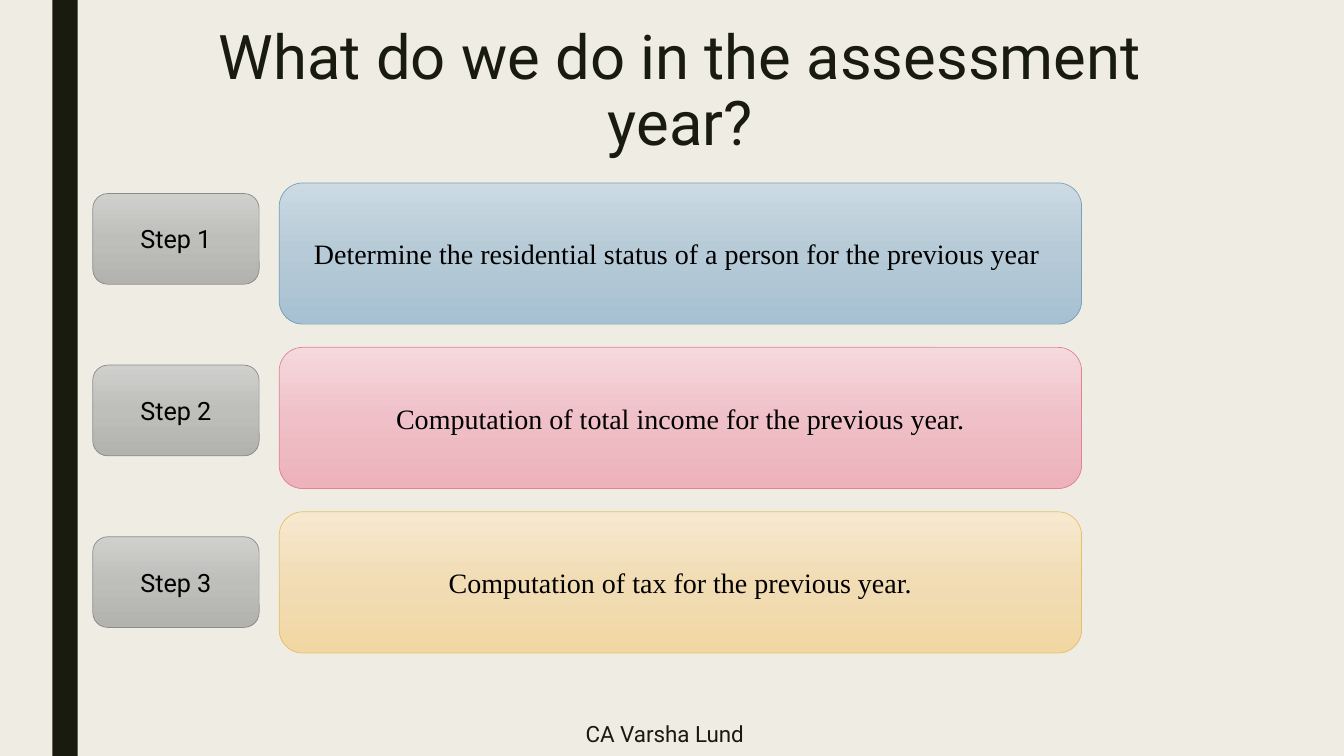
from dataclasses import dataclass

from lxml.etree import SubElement
from pptx import Presentation
from pptx.dml.color import RGBColor
from pptx.dml.fill import FillFormat
from pptx.enum.shapes import MSO_SHAPE
from pptx.enum.text import MSO_ANCHOR, PP_ALIGN
from pptx.oxml.ns import qn
from pptx.shapes.autoshape import Shape
from pptx.slide import Slide
from pptx.util import Inches, Pt

SLIDE_WIDTH = Inches(13.333)
SLIDE_HEIGHT = Inches(7.5)
BACKGROUND = "EFEDE3"
DARK = "191B0E"
BLACK = "000000"


@dataclass(frozen=True)
class Area:
    left: float
    top: float
    width: float
    height: float

    def shifted(self, distance: float) -> "Area":
        return Area(self.left, self.top + distance, self.width, self.height)

    def lengths(self) -> tuple[int, int, int, int]:
        return (
            round(self.left / 100 * SLIDE_WIDTH),
            round(self.top / 100 * SLIDE_HEIGHT),
            round(self.width / 100 * SLIDE_WIDTH),
            round(self.height / 100 * SLIDE_HEIGHT),
        )


@dataclass(frozen=True)
class Palette:
    gradient: tuple[str, str, str]
    outline: str


@dataclass(frozen=True)
class Step:
    task: str
    palette: Palette


SIDE_BAR = Area(3.9, 0, 1.88, 100)
TITLE = Area(11.25, 2.93, 78.75, 21.6)
FOOTER = Area(23.7, 94.13, 51.53, 5.87)
FIRST_LABEL = Area(6.9, 25.6, 12.38, 12)
FIRST_TASK = Area(20.78, 24.2, 59.7, 18.67)
LABEL_PITCH = 22.7
TASK_PITCH = 21.75

GREY = Palette(("CFCFCD", "BEBEBB", "B2B3AF"), "8C8D86")
BLUE = Palette(("CCDAE3", "B6CAD7", "A7C1D2"), "77A2BB")
PINK = Palette(("F6D9DD", "EFC0C7", "EEB2BB"), "E28394")
GOLD = Palette(("F7E9D0", "F1DCB4", "F1D7A3"), "E6C069")

STEPS = (
    Step("Determine the residential status of a person for the previous year ", BLUE),
    Step("Computation of total income for the previous year.", PINK),
    Step("Computation of tax for the previous year.", GOLD),
)


def color(value: str) -> RGBColor:
    return RGBColor.from_string(value)


def fill_solid(fill: FillFormat, value: str) -> None:
    fill.solid()
    fill.fore_color.rgb = color(value)


def fill_gradient(shape: Shape, colors: tuple[str, ...]) -> None:
    shape.fill.gradient()
    shape.fill.gradient_angle = 270
    stops = shape._element.spPr.find(qn("a:gradFill")).find(qn("a:gsLst"))
    for stop in list(stops):
        stops.remove(stop)
    for index, value in enumerate(colors):
        position = index * 100000 // (len(colors) - 1)
        stop = SubElement(stops, qn("a:gs"), pos=str(position))
        SubElement(stop, qn("a:srgbClr"), val=value)


def write(
    shape: Shape,
    text: str,
    *,
    size: float,
    font: str = "Roboto",
    text_color: str = BLACK,
    anchor: MSO_ANCHOR = MSO_ANCHOR.MIDDLE,
    line_spacing: float = 1.0,
) -> None:
    frame = shape.text_frame
    frame.word_wrap = True
    frame.vertical_anchor = anchor
    paragraph = frame.paragraphs[0]
    paragraph.alignment = PP_ALIGN.CENTER
    paragraph.line_spacing = line_spacing
    run = paragraph.add_run()
    run.text = text
    run.font.name = font
    run.font.size = Pt(size)
    run.font.color.rgb = color(text_color)


def add_card(slide: Slide, area: Area, palette: Palette) -> Shape:
    shape = slide.shapes.add_shape(MSO_SHAPE.ROUNDED_RECTANGLE, *area.lengths())
    shape.shadow.inherit = False
    fill_gradient(shape, palette.gradient)
    shape.line.color.rgb = color(palette.outline)
    shape.line.width = Pt(0.5)
    return shape


def add_side_bar(slide: Slide) -> None:
    bar = slide.shapes.add_shape(MSO_SHAPE.RECTANGLE, *SIDE_BAR.lengths())
    bar.shadow.inherit = False
    fill_solid(bar.fill, DARK)
    bar.line.fill.background()


def add_steps(slide: Slide) -> None:
    for index, step in enumerate(STEPS):
        task = add_card(slide, FIRST_TASK.shifted(index * TASK_PITCH), step.palette)
        write(task, step.task, size=20, font="Times New Roman")
        label = add_card(slide, FIRST_LABEL.shifted(index * LABEL_PITCH), GREY)
        write(label, f"Step {index + 1}", size=18)


def main() -> None:
    presentation = Presentation()
    presentation.slide_width = SLIDE_WIDTH
    presentation.slide_height = SLIDE_HEIGHT
    slide = presentation.slides.add_slide(presentation.slide_layouts[6])
    fill_solid(slide.background.fill, BACKGROUND)
    add_side_bar(slide)
    title = slide.shapes.add_textbox(*TITLE.lengths())
    write(
        title,
        "What do we do in the assessment year?",
        size=44,
        text_color=DARK,
        anchor=MSO_ANCHOR.TOP,
        line_spacing=0.89,
    )
    add_steps(slide)
    footer = slide.shapes.add_textbox(*FOOTER.lengths())
    write(footer, "CA Varsha Lund", size=16, text_color=DARK)
    presentation.save("out.pptx")


if __name__ == "__main__":
    main()
